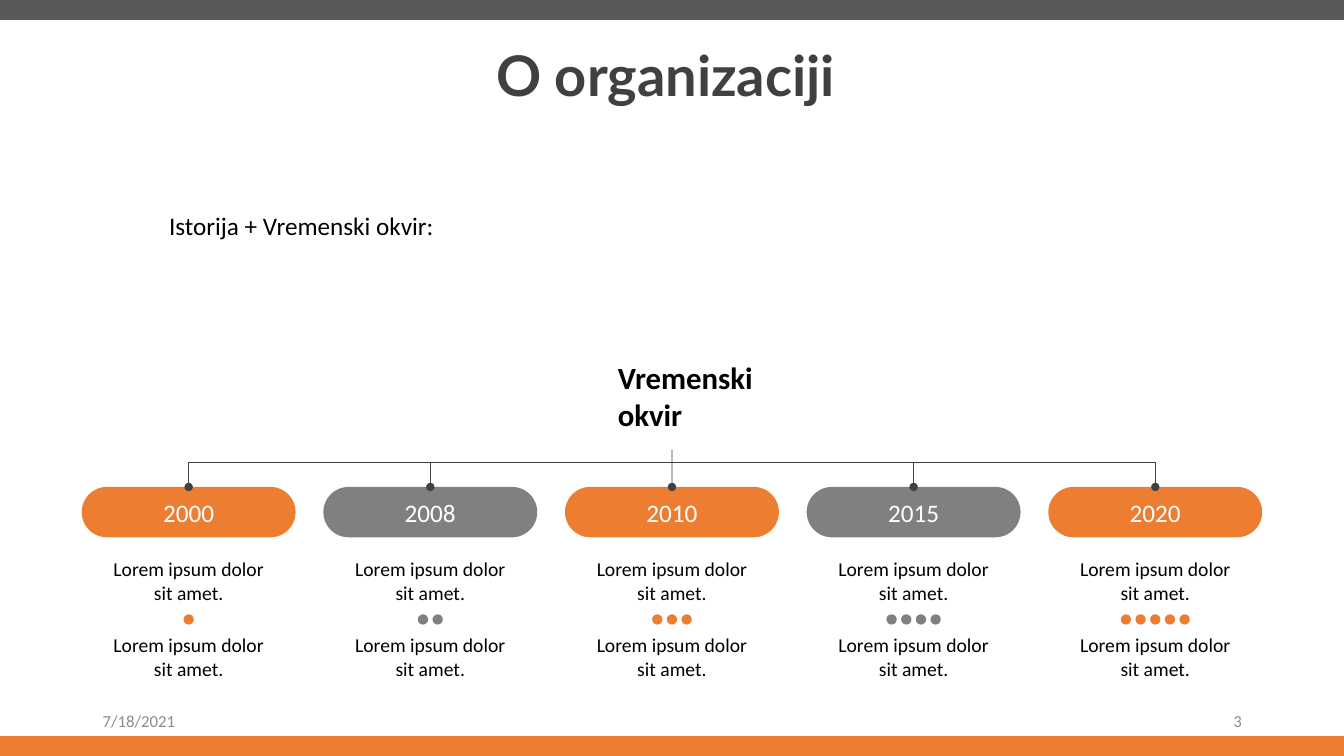
"""Build the organisation history slide with its timeline."""
from lxml.etree import SubElement
from pptx import Presentation
from pptx.dml.color import RGBColor
from pptx.enum.shapes import MSO_CONNECTOR, MSO_SHAPE
from pptx.enum.text import MSO_ANCHOR, PP_ALIGN
from pptx.oxml.ns import qn
from pptx.util import Cm, Pt

TITLE = "O organizaciji "
INTRO = "Istorija + Vremenski okvir:"
TIMELINE_TITLE = "Vremenski okvir"
DATE, PAGE_NUMBER = "7/18/2021", "3"
LOREM = "Lorem ipsum dolor sit amet."
MILESTONES = [
    ("2000", [LOREM, LOREM]),
    ("2008", [LOREM, LOREM]),
    ("2010", [LOREM, LOREM]),
    ("2015", [LOREM, LOREM]),
    ("2020", [LOREM, LOREM]),
]

ORANGE, GREY, DARK, BAR, MUTED = "ED7D31", "808080", "404040", "595959", "8C8C8C"
BLACK, WHITE = "000000", "FFFFFF"

WIDTH, HEIGHT, BAR_HEIGHT = 33.87, 19.05, 0.5
CENTRE, COLUMN_STEP = WIDTH / 2, 6.09
PILL_TOP, PILL_WIDTH, PILL_HEIGHT = 12.27, 5.39, 1.27
NOTE_TOPS, NOTE_WIDTH, NOTE_HEIGHT = (14.04, 15.96), 4, 1.2
DOT_TOP, DOT_SIZE, DOT_STEP = 15.48, 0.26, 0.37
STEM_TOP, BUS_TOP = 11.33, 11.65


def colour(value):
    return RGBColor.from_string(value)


def write(shape, text, size=18, font="Calibri", color=BLACK, bold=False,
          align=PP_ALIGN.LEFT, anchor=MSO_ANCHOR.TOP, inset=None, wrap=True, spacing=None):
    frame = shape.text_frame
    frame.word_wrap = wrap
    frame.vertical_anchor = anchor
    if inset is not None:
        frame.margin_left = frame.margin_right = Cm(inset)
        frame.margin_top = frame.margin_bottom = Cm(inset)
    para = frame.paragraphs[0]
    para.alignment = align
    if spacing:
        para.line_spacing = spacing
    span = para.add_run()
    span.text = text
    span.font.name, span.font.size, span.font.bold = font, Pt(size), bold
    span.font.color.rgb = colour(color)


def add_text(page, left, top, width, height, text, **style):
    box = page.shapes.add_textbox(Cm(left), Cm(top), Cm(width), Cm(height))
    write(box, text, **style)


def add_filled(page, kind, left, top, width, height, fill):
    shape = page.shapes.add_shape(kind, Cm(left), Cm(top), Cm(width), Cm(height))
    shape.shadow.inherit = False
    shape.fill.solid()
    shape.fill.fore_color.rgb = colour(fill)
    shape.line.fill.background()
    return shape


def add_line(page, start, end, pill=None):
    line = page.shapes.add_connector(MSO_CONNECTOR.STRAIGHT, *map(Cm, start + end))
    line.line.width = Pt(0.5)
    line.line.color.rgb = colour(DARK)
    SubElement(line.element.spPr, qn("a:effectLst"))
    if pill is not None:
        line.end_connect(pill, 0)
        SubElement(line.line._get_or_add_ln(), qn("a:tailEnd"), type="oval")


def add_milestone(page, index, year, notes):
    middle = CENTRE + (index - (len(MILESTONES) - 1) / 2) * COLUMN_STEP
    fill = GREY if index % 2 else ORANGE
    pill = add_filled(page, MSO_SHAPE.ROUNDED_RECTANGLE, middle - PILL_WIDTH / 2,
                      PILL_TOP, PILL_WIDTH, PILL_HEIGHT, fill)
    pill.adjustments[0] = 0.5
    write(pill, year, color=WHITE, align=PP_ALIGN.CENTER, anchor=MSO_ANCHOR.MIDDLE)
    for top, note in zip(NOTE_TOPS, notes):
        add_text(page, middle - NOTE_WIDTH / 2, top, NOTE_WIDTH, NOTE_HEIGHT, note,
                 size=14, align=PP_ALIGN.CENTER, inset=0)
    first_dot = middle - (index * DOT_STEP + DOT_SIZE) / 2
    for dot in range(index + 1):
        add_filled(page, MSO_SHAPE.OVAL, first_dot + dot * DOT_STEP, DOT_TOP,
                   DOT_SIZE, DOT_SIZE, fill)
    return middle, pill


def main():
    deck = Presentation()
    deck.slide_width, deck.slide_height = Cm(WIDTH), Cm(HEIGHT)
    page = deck.slides.add_slide(deck.slide_layouts[5])

    for top, fill in ((HEIGHT - BAR_HEIGHT, ORANGE), (0, BAR)):
        add_filled(page, MSO_SHAPE.RECTANGLE, 0, top, WIDTH, BAR_HEIGHT, fill)

    title = page.shapes.title
    title.left, title.top, title.width, title.height = Cm(1.02), Cm(1.22), Cm(31.85), Cm(1.55)
    write(title, TITLE, size=40, font="Lato", color=DARK, bold=True,
          align=PP_ALIGN.CENTER, inset=0, spacing=0.9)

    add_text(page, 4.01, 5.18, 7.29, 4.88, INTRO, wrap=False)
    for left, text, align in ((2.34, DATE, PP_ALIGN.LEFT), (23.93, PAGE_NUMBER, PP_ALIGN.RIGHT)):
        add_text(page, left, 17.65, 7.62, 1.02, text, size=12, color=MUTED,
                 align=align, anchor=MSO_ANCHOR.MIDDLE)

    columns = [add_milestone(page, index, *milestone)
               for index, milestone in enumerate(MILESTONES)]
    add_line(page, (columns[0][0], BUS_TOP), (columns[-1][0], BUS_TOP))
    for index, (middle, pill) in enumerate(columns):
        top = STEM_TOP if index == len(columns) // 2 else BUS_TOP
        add_line(page, (middle, top), (middle, PILL_TOP), pill)
    add_text(page, 15.32, 8.92, 5.2, 2.2, TIMELINE_TITLE, size=22, bold=True)

    deck.save("out.pptx")


if __name__ == "__main__":
    main()
